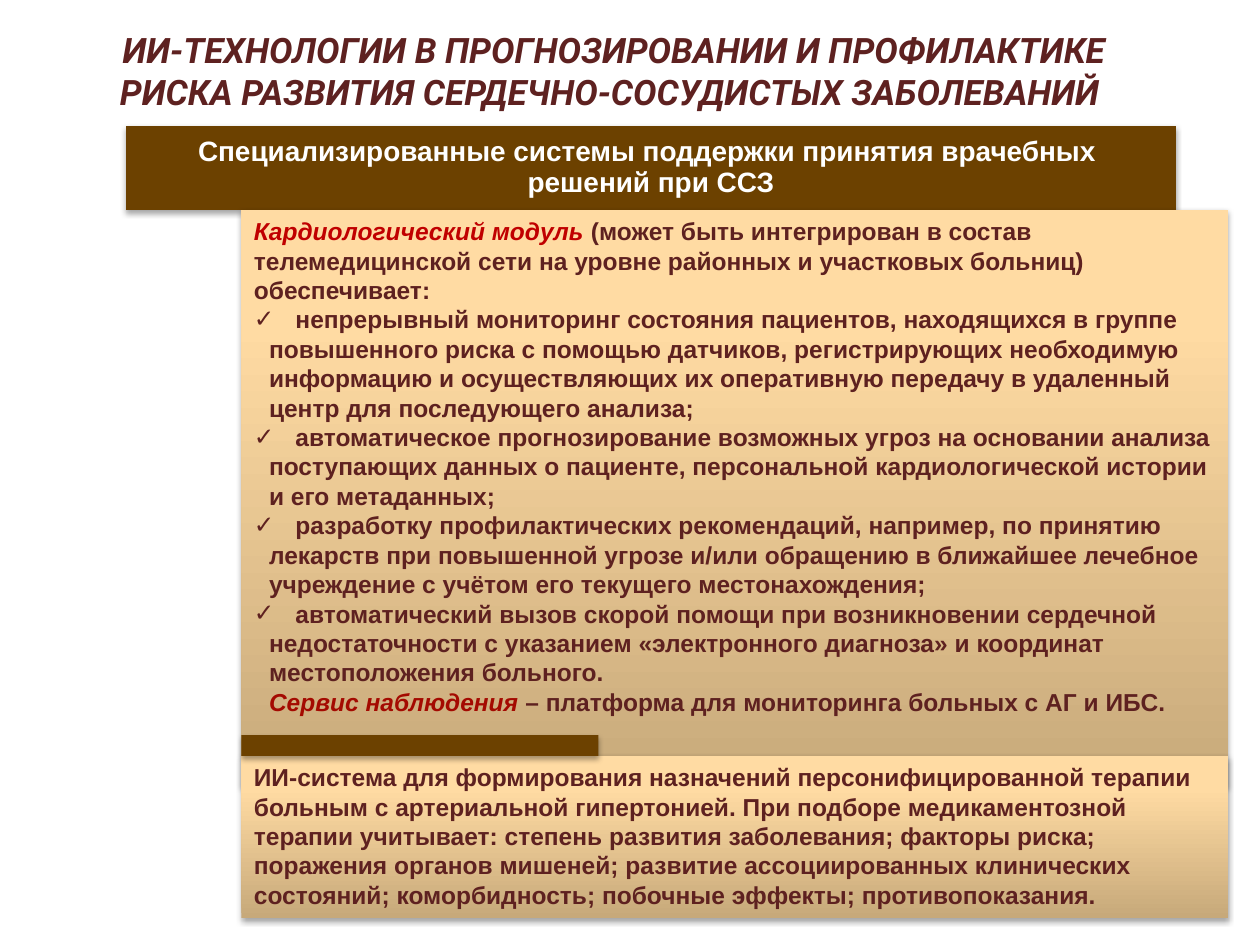
from copy import deepcopy
from dataclasses import dataclass

from lxml import etree
from pptx import Presentation, util as u
from pptx.dml.color import RGBColor
from pptx.enum import shapes, text
from pptx.oxml import parse_xml
from pptx.oxml.ns import nsdecls, qn


@dataclass(frozen=True)
class Theme:
    brown: str = "6C4100"
    wine: str = "5E2120"
    red: str = "C00000"
    dark_red: str = "A40A01"
    white: str = "FFFFFF"
    sand: tuple = ((0, "C7A97A"), (0.8, "FFDBA3"), (1, "FFDCA5"))
    title_font: str = "Roboto"
    body_font: str = "Arial"
    title_size: int = 20
    header_size: int = 16
    body_size: int = 14


THEME = Theme()
CELL = u.Inches(1) / 12  # the slide is a grid of 120 columns by 90 rows
HANG = 0.12
TEXT_START = 0.33

FEATURES = (
    "непрерывный мониторинг состояния пациентов, находящихся в группе повышенного риска "
    "с помощью датчиков, регистрирующих необходимую информацию и осуществляющих их "
    "оперативную передачу в удаленный центр для последующего анализа;",
    "автоматическое прогнозирование возможных угроз на основании анализа поступающих данных "
    "о пациенте, персональной кардиологической истории и его метаданных;",
    "разработку профилактических рекомендаций, например, по принятию лекарств при повышенной "
    "угрозе и/или обращению в ближайшее лечебное учреждение с учётом его текущего "
    "местонахождения;",
    "автоматический вызов скорой помощи при возникновении сердечной недостаточности "
    "с указанием «электронного диагноза» и координат местоположения больного.",
)
THERAPY = (
    "ИИ-система для формирования назначений персонифицированной терапии больным "
    "с артериальной гипертонией. При подборе медикаментозной терапии учитывает: степень "
    "развития заболевания; факторы риска; поражения органов мишеней; развитие "
    "ассоциированных клинических состояний; коморбидность; побочные эффекты; "
    "противопоказания."
)


def grid(*cells):
    return [u.Emu(round(cell * CELL)) for cell in cells]


def add_shadow(shape):
    shape.shadow.inherit = False
    effects = shape._element.spPr.find(qn("a:effectLst"))
    effects.append(parse_xml(
        f'<a:outerShdw {nsdecls("a")} blurRad="{u.Pt(3.1)}" dist="{u.Pt(1.8)}" '
        'dir="5400000" rotWithShape="0"><a:srgbClr val="000000">'
        '<a:alpha val="35000"/></a:srgbClr></a:outerShdw>'))


def fill_gradient(fill, stops):
    """Run the colour stops from the bottom edge to the top edge."""
    fill.gradient()
    fill.gradient_angle = 90
    last = fill.gradient_stops[-1]._gs
    last.addnext(deepcopy(last))
    for stop, (position, color) in zip(fill.gradient_stops, stops):
        stop.position = position
        stop.color.rgb = RGBColor.from_string(color)


def add_panel(slide, *cells, fill):
    panel = slide.shapes.add_shape(shapes.MSO_SHAPE.RECTANGLE, *grid(*cells))
    panel.line.fill.background()
    if isinstance(fill, str):
        panel.fill.solid()
        panel.fill.fore_color.rgb = RGBColor.from_string(fill)
    else:
        fill_gradient(panel.fill, fill)
    add_shadow(panel)
    frame = panel.text_frame
    frame.word_wrap = True
    frame.vertical_anchor = text.MSO_ANCHOR.TOP
    return frame


def next_paragraph(frame, align=text.PP_ALIGN.LEFT):
    first = frame.paragraphs[0]
    paragraph = frame.add_paragraph() if first.runs else first
    paragraph.alignment = align
    return paragraph


def indent(paragraph, bullet=None):
    """Indent the lines; a bullet hangs at the edge with a tab after it."""
    properties = paragraph._p.get_or_add_pPr()
    properties.set("marL", str(u.Inches(HANG)))
    properties.set("indent", str(-u.Inches(HANG) if bullet else 0))
    if bullet:
        etree.SubElement(properties, qn("a:buFont"), typeface=THEME.body_font)
        etree.SubElement(properties, qn("a:buChar"), char=bullet)
        tabs = etree.SubElement(properties, qn("a:tabLst"))
        etree.SubElement(tabs, qn("a:tab"), pos=str(u.Inches(TEXT_START)), algn="l")


def write(paragraph, words, *, size=THEME.body_size, color=THEME.wine,
          font=THEME.body_font, italic=False):
    for number, line in enumerate(words.split("\n")):
        if number:
            paragraph.add_line_break()
        run = paragraph.add_run()
        run.text = line
        run.font.name = font
        run.font.size = u.Pt(size)
        run.font.bold = True
        run.font.italic = italic
        run.font.color.rgb = RGBColor.from_string(color)


def add_title(slide):
    title = slide.shapes.title
    title.left, title.top, title.width, title.height = grid(0, 2, 117, 9.4)
    title.text_frame.vertical_anchor = text.MSO_ANCHOR.MIDDLE
    write(next_paragraph(title.text_frame, text.PP_ALIGN.CENTER),
          "ИИ-ТЕХНОЛОГИИ В ПРОГНОЗИРОВАНИИ И ПРОФИЛАКТИКЕ\n"
          "РИСКА РАЗВИТИЯ СЕРДЕЧНО-СОСУДИСТЫХ ЗАБОЛЕВАНИЙ ",
          size=THEME.title_size, font=THEME.title_font, italic=True)


def add_header(slide):
    header = add_panel(slide, 12, 12, 100, 8, fill=THEME.brown)
    header.word_wrap = False
    header.vertical_anchor = text.MSO_ANCHOR.MIDDLE
    for line in ("Специализированные системы поддержки принятия врачебных ",
                 "решений при ССЗ"):
        paragraph = next_paragraph(header, text.PP_ALIGN.CENTER)
        paragraph.line_spacing = 0.9
        write(paragraph, line, size=THEME.header_size, color=THEME.white)


def add_systems(slide):
    systems = add_panel(slide, 23, 20, 94, 55, fill=THEME.sand)
    intro = next_paragraph(systems)
    write(intro, "Кардиологический модуль ", color=THEME.red, italic=True)
    write(intro, "(может быть интегрирован в состав телемедицинской сети на уровне "
                 "районных и участковых больниц) обеспечивает:")
    for feature in FEATURES:
        item = next_paragraph(systems)
        indent(item, bullet="✓")
        write(item, "\t" + feature)
    platform = next_paragraph(systems)
    indent(platform)
    write(platform, "Сервис наблюдения ", color=THEME.dark_red, italic=True)
    write(platform, "– платформа для мониторинга больных с АГ и ИБС.")


def add_therapy(slide):
    therapy = add_panel(slide, 23, 72, 94, 15.4, fill=THEME.sand)
    write(next_paragraph(therapy), THERAPY)
    add_panel(slide, 23, 70, 34, 2, fill=THEME.brown)


def main():
    deck = Presentation()
    deck.slide_width, deck.slide_height = grid(120, 90)
    slide = deck.slides.add_slide(deck.slide_layouts.get_by_name("Title Only"))
    add_title(slide)
    add_header(slide)
    add_systems(slide)
    add_therapy(slide)
    deck.save("out.pptx")


if __name__ == "__main__":
    main()
